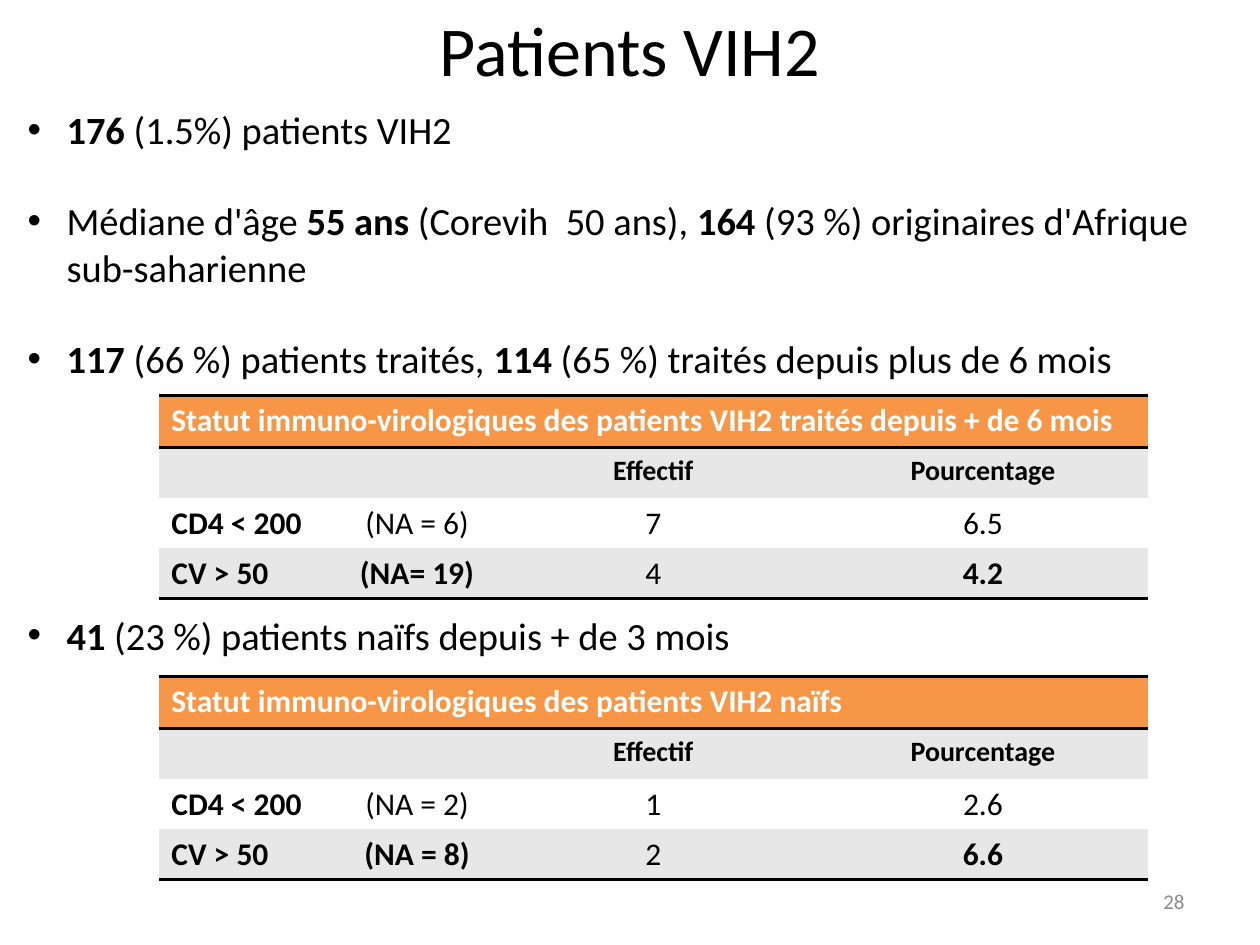
from dataclasses import dataclass

from lxml import etree
from pptx import Presentation
from pptx.dml.color import RGBColor
from pptx.enum.text import MSO_ANCHOR, PP_ALIGN
from pptx.oxml.ns import qn
from pptx.util import Inches, Pt

LEFT, CENTER, RIGHT = PP_ALIGN.LEFT, PP_ALIGN.CENTER, PP_ALIGN.RIGHT
MIDDLE = MSO_ANCHOR.MIDDLE
FONT = "Calibri"
COLORS = {
    "text": "000000",
    "white": "FFFFFF",
    "head": "F79646",
    "band": "E7E7E7",
    "page": "8C8C8C",
}


@dataclass
class Label:
    text: str
    left: float
    top: float
    width: float
    height: float
    size: int
    color: str
    align: PP_ALIGN


@dataclass
class Bullet:
    text: str
    gap: float


@dataclass
class Grid:
    top: float
    title: str
    rows: list[list[str]]


LABELS = [
    Label("28", 7.17, 6.95, 2.33, 0.4, 12, "page", RIGHT),
    Label("Patients VIH2", 0, 0, 10, 0.77, 40, "text", CENTER),
]
BULLETS = [
    Bullet("**176** (1.5%) patients VIH2", 0),
    Bullet("Médiane d'âge **55 ans **(Corevih  50 ans), **164** (93 %) "
           "originaires d'Afrique sub-saharienne", 26),
    Bullet("**117 **(66 %) patients traités, **114** (65 %) traités "
           "depuis plus de 6 mois", 26),
    Bullet("**41 **(23 %) patients naïfs depuis + de 3 mois", 131.5),
]
HEADS = ["", "**Effectif**", "**Pourcentage**"]
GRIDS = [
    Grid(3.14, "Statut immuno-virologiques des patients VIH2 traités depuis + de 6 mois", [
        ["**CD4 < 200**\t(NA = 6)", "7", "6.5"],
        ["**CV > 50\t(NA= 19)**", "4", "**4.2**"],
    ]),
    Grid(5.37, "Statut immuno-virologiques des patients VIH2 naïfs", [
        ["**CD4 < 200**\t(NA = 2)", "1", "2.6"],
        ["**CV > 50\t(NA = 8)**", "2", "**6.6**"],
    ]),
]


def rgb(name: str) -> RGBColor:
    return RGBColor.from_string(COLORS[name])


def write(para, text: str, size: int, color: str = "text", align: PP_ALIGN = LEFT) -> None:
    para.alignment = align
    for i, part in enumerate(text.split("**")):
        if part:
            run = para.add_run()
            run.text = part
            run.font.name = FONT
            run.font.size = Pt(size)
            run.font.bold = i % 2 == 1
            run.font.color.rgb = rgb(color)


def add_label(slide, label: Label) -> None:
    box = slide.shapes.add_textbox(Inches(label.left), Inches(label.top),
                                   Inches(label.width), Inches(label.height))
    frame = box.text_frame
    frame.word_wrap = True
    if label.align == RIGHT:
        frame.vertical_anchor = MIDDLE
    write(frame.paragraphs[0], label.text, label.size, label.color, label.align)


def add_list(slide) -> None:
    box = slide.shapes.add_textbox(Inches(0.12), Inches(0.79), Inches(9.68), Inches(6.77))
    frame = box.text_frame
    frame.word_wrap = True
    for i, item in enumerate(BULLETS):
        para = frame.paragraphs[0] if i == 0 else frame.add_paragraph()
        write(para, item.text, 22)
        para.space_before = Pt(item.gap)
        props = para._p.get_or_add_pPr()
        props.set("marL", str(Inches(0.31)))
        props.set("indent", str(Inches(-0.31)))
        etree.SubElement(props, qn("a:buFont"), typeface="Arial")
        etree.SubElement(props, qn("a:buChar"), char="•")


def set_edges(cell, top: bool, base: bool) -> None:
    props = cell._tc.get_or_add_tcPr()
    for side, shown in (("L", False), ("R", False), ("T", top), ("B", base)):
        line = etree.SubElement(props, qn(f"a:ln{side}"), w=str(Pt(2)))
        if shown:
            fill = etree.SubElement(line, qn("a:solidFill"))
            etree.SubElement(fill, qn("a:srgbClr"), val=COLORS["text"])
        else:
            etree.SubElement(line, qn("a:noFill"))


def add_tab(para) -> None:
    tabs = etree.SubElement(para._p.get_or_add_pPr(), qn("a:tabLst"))
    etree.SubElement(tabs, qn("a:tab"), pos=str(Inches(1.95)), algn="ctr")


def add_grid(slide, grid: Grid) -> None:
    rows = [[f"**{grid.title}**", "", ""], HEADS, *grid.rows]
    table = slide.shapes.add_table(len(rows), 3, Inches(1.26), Inches(grid.top),
                                   Inches(7.85), Inches(1.61)).table
    table.first_row = False
    table.horz_banding = False
    for r, row in enumerate(rows):
        table.rows[r].height = Inches(0.41 if r == 0 else 0.4)
        for c, text in enumerate(row):
            cell = table.cell(r, c)
            set_edges(cell, r < 2, r in (0, len(rows) - 1))
            cell.fill.solid()
            cell.fill.fore_color.rgb = rgb(("head", "band", "white", "band")[r])
            para = cell.text_frame.paragraphs[0]
            write(para, text, 16 if r == 1 else 18,
                  "white" if r == 0 else "text", CENTER if c else LEFT)
            if "\t" in text:
                add_tab(para)
    table.cell(0, 0).merge(table.cell(0, 2))


def main() -> None:
    deck = Presentation()
    deck.slide_width = Inches(10)
    deck.slide_height = Inches(7.5)
    slide = deck.slides.add_slide(deck.slide_layouts[6])
    for label in LABELS:
        add_label(slide, label)
    add_list(slide)
    for grid in GRIDS:
        add_grid(slide, grid)
    deck.save("out.pptx")


if __name__ == "__main__":
    main()
